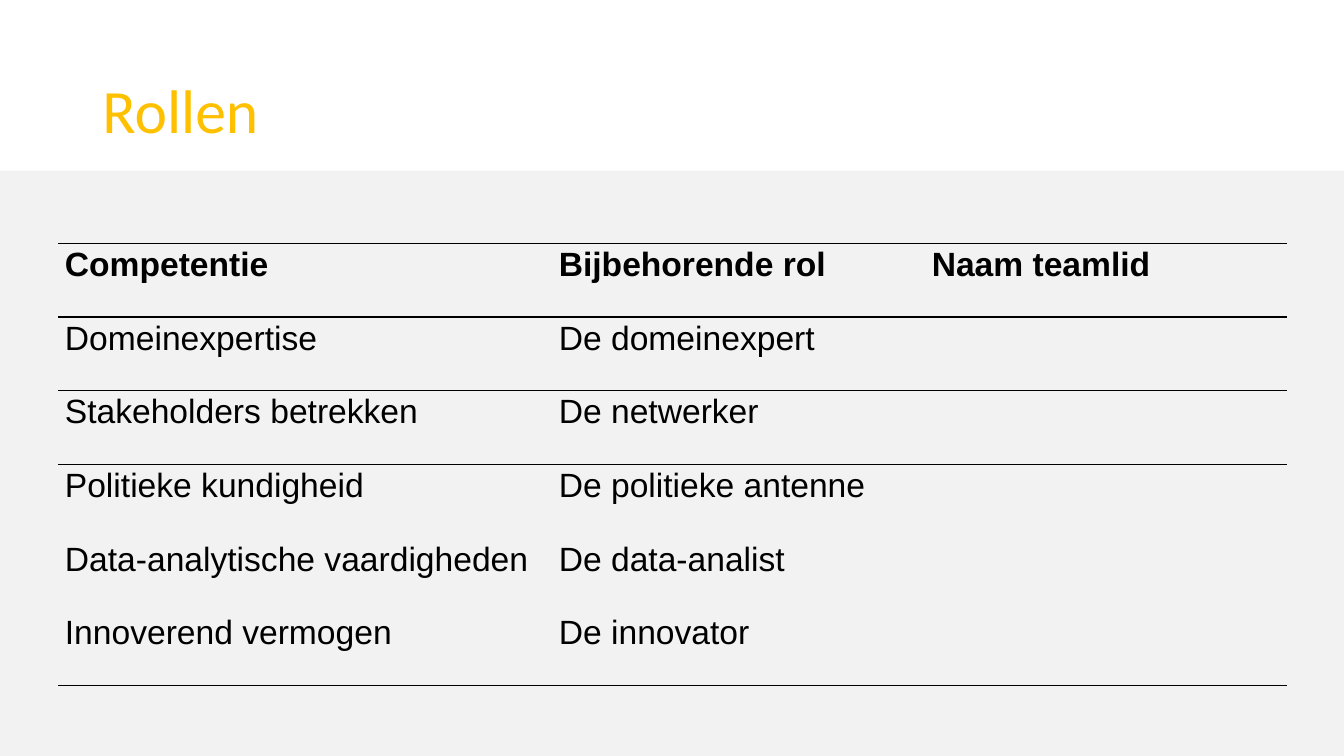
from dataclasses import dataclass

from lxml.etree import SubElement
from pptx import Presentation
from pptx.dml.color import RGBColor
from pptx.enum.shapes import MSO_SHAPE
from pptx.enum.text import MSO_ANCHOR, PP_ALIGN
from pptx.oxml.ns import qn
from pptx.util import Pt

TITLE = "Rollen"
ROLES = [
    ("Competentie", "Bijbehorende rol", "Naam teamlid"),
    ("Domeinexpertise", "De domeinexpert", ""),
    ("Stakeholders betrekken", "De netwerker", ""),
    ("Politieke kundigheid", "De politieke antenne", ""),
    ("Data-analytische vaardigheden", "De data-analist", ""),
    ("Innoverend vermogen", "De innovator", ""),
]
RULED_EDGES = {0, 1, 2, len(ROLES)}
NO_STYLE_NO_GRID = "{2D5ABB26-0587-4C30-8999-92F81FD0307C}"

SLIDE_WIDTH, SLIDE_HEIGHT = 960, 540
PANEL_TOP = 121.9
TABLE_LEFT, TABLE_TOP = 41.3, 173.8
COLUMN_WIDTHS = (352.8, 266.4, 258.5)
ROW_HEIGHT = 52.64
CELL_MARGIN = 5.1


@dataclass(frozen=True)
class Theme:
    title_color: str = "FFC000"
    panel_color: str = "F2F2F2"
    text_color: str = "000000"
    title_font: str = "Calibri"
    body_font: str = "Arial"
    title_size: int = 44
    body_size: int = 24
    rule_width: int = 1


THEME = Theme()


def style_font(font, name, size, color, bold=False):
    font.name = name
    font.size = Pt(size)
    font.bold = bold
    font.color.rgb = RGBColor.from_string(color)


def add_rule(cell, side):
    properties = cell._tc.get_or_add_tcPr()
    rule = SubElement(properties, qn(f"a:{side}"), w=str(Pt(THEME.rule_width)))
    fill = SubElement(rule, qn("a:solidFill"))
    SubElement(fill, qn("a:srgbClr"), val=THEME.text_color)


def add_panel(slide):
    panel = slide.shapes.add_shape(
        MSO_SHAPE.RECTANGLE, 0, Pt(PANEL_TOP),
        Pt(SLIDE_WIDTH), Pt(SLIDE_HEIGHT - PANEL_TOP))
    panel.shadow.inherit = False
    panel.fill.solid()
    panel.fill.fore_color.rgb = RGBColor.from_string(THEME.panel_color)
    panel.line.fill.background()
    slide.shapes.title._element.addprevious(panel._element)


def fill_title(slide):
    title = slide.shapes.title
    title.left, title.top = Pt(66), Pt(28.75)
    title.width, title.height = Pt(828), Pt(104.4)
    title.text_frame.text = TITLE
    title.text_frame.vertical_anchor = MSO_ANCHOR.MIDDLE
    heading = title.text_frame.paragraphs[0]
    heading.alignment = PP_ALIGN.LEFT
    heading.line_spacing = 0.9
    style_font(heading.font, THEME.title_font, THEME.title_size, THEME.title_color)


def add_roles_table(slide):
    frame = slide.shapes.add_table(
        len(ROLES), len(COLUMN_WIDTHS), Pt(TABLE_LEFT), Pt(TABLE_TOP),
        Pt(sum(COLUMN_WIDTHS)), Pt(ROW_HEIGHT * len(ROLES)))
    table = frame.table
    table.horz_banding = False
    table._tbl.tblPr.find(qn("a:tableStyleId")).text = NO_STYLE_NO_GRID
    for column, width in zip(table.columns, COLUMN_WIDTHS):
        column.width = Pt(width)
    for row_index, role in enumerate(ROLES):
        table.rows[row_index].height = Pt(ROW_HEIGHT)
        for column_index, wording in enumerate(role):
            cell = table.cell(row_index, column_index)
            cell.margin_left = cell.margin_right = Pt(CELL_MARGIN)
            cell.margin_top = cell.margin_bottom = 0
            for side, edge in (("lnT", row_index), ("lnB", row_index + 1)):
                if edge in RULED_EDGES:
                    add_rule(cell, side)
            cell.fill.background()
            cell.text = wording
            paragraph = cell.text_frame.paragraphs[0]
            paragraph.alignment = PP_ALIGN.JUSTIFY
            paragraph.line_spacing = 1.07
            style_font(paragraph.font, THEME.body_font, THEME.body_size,
                       THEME.text_color, bold=row_index == 0)


def main():
    presentation = Presentation()
    presentation.slide_width = Pt(SLIDE_WIDTH)
    presentation.slide_height = Pt(SLIDE_HEIGHT)
    slide = presentation.slides.add_slide(presentation.slide_layouts[5])
    add_panel(slide)
    fill_title(slide)
    add_roles_table(slide)
    presentation.save("out.pptx")


if __name__ == "__main__":
    main()
